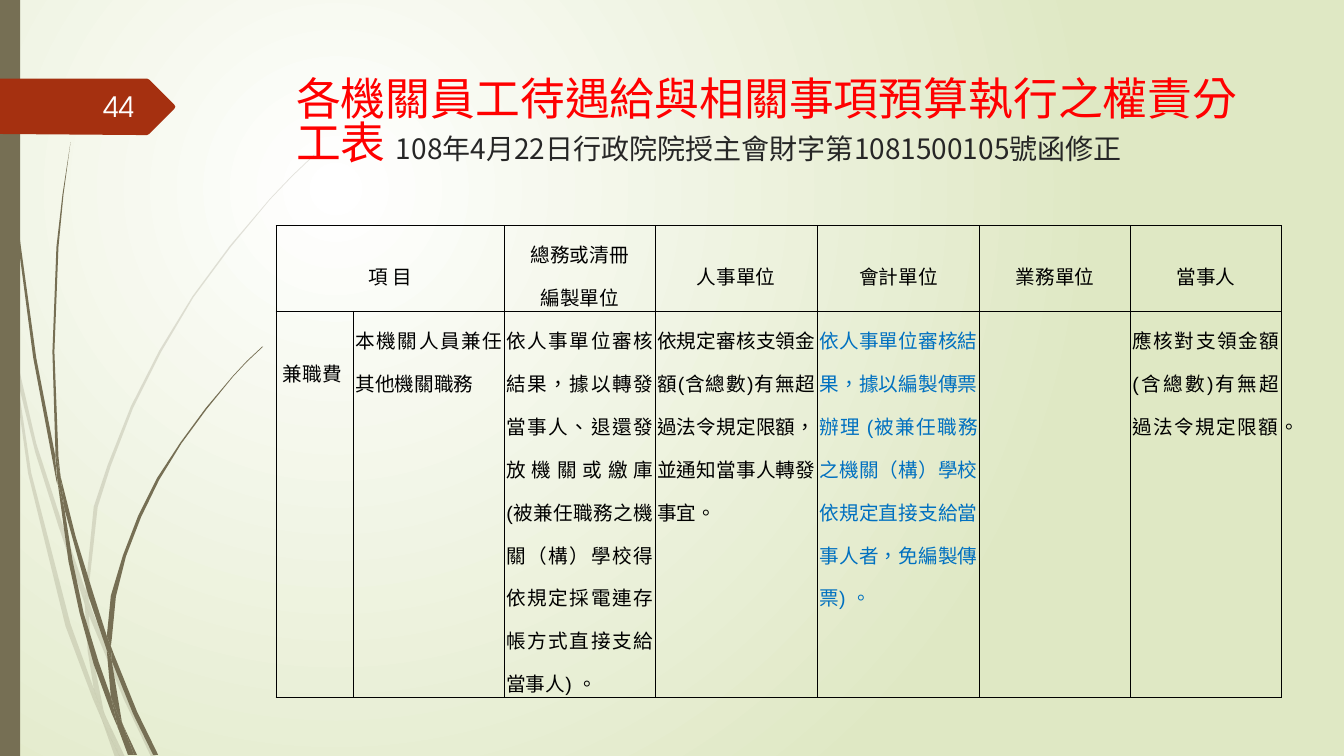
from lxml import etree
from pptx import Presentation
from pptx import util as u
from pptx.dml import color
from pptx.enum import lang, text
from pptx.enum import shapes as kinds
from pptx.oxml import ns

COLORS = {
    "white": "FFFFFF", "mist": "DFE8C4", "stem": "766F54", "flag": "A53010",
    "title": "FF0000", "note": "262626", "number": "FEFFFF",
    "black": "000000", "blue": "0070C0",
}
CJK = "Noto Sans CJK SC"
HUNDREDTH_INCH = u.Cm(0.0254)

PALE_STEMS = [
    [(11, 350), (9, 322), (0, 282), (0, 299), (10, 344)],
    [(58, 522), (84, 599), (85, 586), (62, 520), (36, 440), (14, 345), (17, 376), (35, 449)],
    [(92, 607), (88, 596), (88, 610), (123, 694), (150, 751), (155, 751), (127, 692)],
    [(119, 751), (124, 751), (105, 711)],
    [(93, 683), (70, 619), (31, 469), (17, 376), (11, 350), (28, 470), (65, 621),
     (92, 693), (101, 714), (99, 707)],
    [(84, 599), (87, 646), (93, 683), (96, 692), (105, 711), (103, 706), (91, 646),
     (88, 610), (88, 608)],
    [(88, 584), (97, 503), (110, 462), (132, 405), (160, 349), (192, 295), (229, 245),
     (268, 198), (290, 175), (312, 154), (312, 153), (289, 175), (268, 197), (228, 244),
     (191, 294), (158, 348), (130, 403), (107, 461), (93, 503), (85, 584), (85, 586), (88, 596)],
    [(101, 714), (114, 751), (119, 751)],
    [(88, 608), (88, 610), (88, 596), (85, 586), (84, 599)],
    [(96, 692), (93, 683), (99, 707), (101, 714), (119, 751), (105, 711)],
]
DARK_STEMS = [
    [(7, 110), (17, 233), (33, 355), (56, 477), (57, 481), (55, 457), (55, 453), (36, 355),
     (19, 232), (8, 109), (5, 48), (4, 0), (3, 0), (4, 48)],
    [(88, 592), (106, 645), (106, 633), (106, 631), (93, 590), (75, 532), (60, 472), (64, 505)],
    [(113, 649), (110, 641), (111, 656), (132, 708), (152, 749), (157, 749), (136, 706)],
    [(110, 691), (98, 657), (83, 608), (72, 556), (64, 505), (57, 477), (68, 557), (79, 608),
     (93, 659), (111, 708), (117, 722), (116, 717)],
    [(60, 472), (58, 453), (54, 349), (58, 245), (63, 193), (70, 141), (62, 193), (56, 245),
     (52, 349), (55, 449)],
    [(133, 749), (136, 749), (122, 719)],
    [(57, 477), (64, 505), (60, 472), (55, 449), (55, 453)],
    [(111, 633), (115, 592), (125, 552), (140, 513), (158, 476), (180, 440), (205, 406),
     (231, 374), (245, 359), (261, 344), (260, 344), (245, 358), (231, 373), (204, 405),
     (179, 439), (156, 474), (137, 512), (122, 551), (110, 591), (106, 631), (110, 641)],
    [(117, 722), (127, 749), (131, 749)],
    [(106, 645), (110, 691), (116, 706), (122, 719), (121, 716), (111, 656), (109, 651)],
    [(106, 645), (109, 651), (111, 656), (110, 641), (106, 631)],
    [(116, 706), (110, 691), (116, 717), (117, 722), (130, 749), (133, 749), (122, 719)],
]
FLAG = [(173, 108), (148, 133), (146, 134), (136, 134), (0, 133), (0, 78),
        (146, 78), (148, 79), (173, 104), (174, 106)]

COLUMN_WIDTHS = [1.95, 3.8, 3.8, 4.09, 4.09, 3.8, 3.8]
ROW_HEIGHTS = [2.06, 9.14]
HEADINGS = {
    0: ["項 目"], 2: ["總務或清冊", "編製單位"], 3: ["人事單位"],
    4: ["會計單位"], 5: ["業務單位"], 6: ["當事人"],
}
DUTIES = [
    "兼職費",
    "本機關人員兼任其他機關職務",
    "依人事單位審核結果，據以轉發當事人、退還發放機關或繳庫 "
    "(被兼任職務之機關（構）學校得依規定採電連存帳方式直接支給當事人) 。",
    "依規定審核支領金額(含總數)有無超過法令規定限額，並通知當事人轉發事宜。",
    "依人事單位審核結果，據以編製傳票辦理 "
    "(被兼任職務之機關（構）學校依規定直接支給當事人者，免編製傳票) 。",
    "",
    "應核對支領金額(含總數)有無超過法令規定限額。",
]


def rgb(name):
    return color.RGBColor.from_string(COLORS[name])


def add_run(paragraph, words, size, font, color_name):
    run = paragraph.add_run()
    run.text = words
    run.font.size = u.Pt(size)
    run.font.name = font
    run.font.bold = False
    run.font.color.rgb = rgb(color_name)
    run.font.language_id = lang.MSO_LANGUAGE_ID.TRADITIONAL_CHINESE
    east_asian = etree.SubElement(run.font._element, ns.qn("a:ea"))
    east_asian.set("typeface", CJK)


def paint(shape, color_name, opacity=100):
    shape.shadow.inherit = False
    shape.fill.solid()
    shape.fill.fore_color.rgb = rgb(color_name)
    shape.line.fill.background()
    if opacity < 100:
        fill_color = shape.element.spPr.find(".//" + ns.qn("a:srgbClr"))
        etree.SubElement(fill_color, ns.qn("a:alpha")).set("val", str(opacity * 1000))


def add_outline(slide, points, color_name, opacity=100):
    builder = slide.shapes.build_freeform(*points[0], scale=HUNDREDTH_INCH)
    builder.add_line_segments(points[1:], close=True)
    paint(builder.convert_to_shape(), color_name, opacity)


def set_background(slide):
    fill = slide.background.fill
    fill.gradient()
    for stop, position, name in zip(fill.gradient_stops, (0, 1), ("white", "mist")):
        stop.position = position
        stop.color.rgb = rgb(name)
    gradient = slide.element.find(".//" + ns.qn("a:gradFill"))
    gradient.remove(gradient.find(ns.qn("a:lin")))
    circle = etree.SubElement(gradient, ns.qn("a:path"), path="circle")
    etree.SubElement(circle, ns.qn("a:fillToRect"),
                     l="50000", t="50000", r="100000", b="100000")


def add_decoration(slide):
    for points in PALE_STEMS:
        add_outline(slide, points, "stem", 20)
    for points in DARK_STEMS:
        add_outline(slide, points, "stem")
    bar = slide.shapes.add_shape(kinds.MSO_SHAPE.RECTANGLE, 0, 0, u.Cm(0.51), u.Cm(19.05))
    paint(bar, "stem")
    add_outline(slide, FLAG, "flag")


def set_title(slide):
    title = slide.shapes.title
    title.element.getparent().append(title.element)
    title.left, title.top = u.Cm(7.21), u.Cm(1.73)
    title.width, title.height = u.Cm(24.77), u.Cm(3.56)
    frame = title.text_frame
    frame.word_wrap = True
    frame.auto_size = text.MSO_AUTO_SIZE.NONE
    frame.vertical_anchor = text.MSO_ANCHOR.TOP
    frame.margin_top = u.Cm(0.28)
    paragraph = frame.paragraphs[0]
    paragraph.alignment = text.PP_ALIGN.LEFT
    paragraph.line_spacing = 0.82
    add_run(paragraph, "各機關員工待遇給與相關事項預算執行之權責分工表 ", 32, CJK, "title")
    add_run(paragraph, "108年4月22日行政院院授主會財字第1081500105號函修正", 20, CJK, "note")


def add_borders(cell):
    properties = cell._tc.get_or_add_tcPr()
    for position, side in enumerate(("a:lnL", "a:lnR", "a:lnT", "a:lnB")):
        line = etree.Element(ns.qn(side), w=str(u.Pt(1)))
        fill = etree.SubElement(line, ns.qn("a:solidFill"))
        etree.SubElement(fill, ns.qn("a:srgbClr"), val=COLORS["black"])
        properties.insert(position, line)


def fill_cell(cell, lines, alignment, color_name="black"):
    for index, words in enumerate(lines):
        frame = cell.text_frame
        paragraph = frame.add_paragraph() if index else frame.paragraphs[0]
        paragraph.alignment = alignment
        paragraph.line_spacing = 1.5
        if words:
            add_run(paragraph, words, 14, "Arial", color_name)


def add_duty_table(slide):
    frame = slide.shapes.add_table(2, len(COLUMN_WIDTHS), u.Cm(6.96), u.Cm(5.69),
                                   u.Cm(sum(COLUMN_WIDTHS)), u.Cm(sum(ROW_HEIGHTS)))
    table = frame.table
    table.first_row = table.horz_banding = False
    for column, width in zip(table.columns, COLUMN_WIDTHS):
        column.width = u.Cm(width)
    for row, height in zip(table.rows, ROW_HEIGHTS):
        row.height = u.Cm(height)
    for cell in table.iter_cells():
        cell.fill.background()
        cell.margin_left = cell.margin_right = u.Cm(0.05)
        cell.margin_top = cell.margin_bottom = 0
        add_borders(cell)
    table.cell(0, 0).merge(table.cell(0, 1))
    for index, lines in HEADINGS.items():
        heading = table.cell(0, index)
        heading.vertical_anchor = text.MSO_ANCHOR.MIDDLE
        fill_cell(heading, lines, text.PP_ALIGN.CENTER)
    for index, words in enumerate(DUTIES):
        fill_cell(table.cell(1, index), [words], text.PP_ALIGN.JUSTIFY,
                  "blue" if index == 4 else "black")
    table.cell(1, 0).margin_top = u.Cm(0.83)
    table.cell(1, 0).margin_left = u.Cm(0.17)


def add_slide_number(slide):
    box = slide.shapes.add_textbox(u.Cm(1.47), u.Cm(2.18), u.Cm(2.16), u.Cm(1.02))
    box.text_frame.word_wrap = True
    box.text_frame.vertical_anchor = text.MSO_ANCHOR.MIDDLE
    paragraph = box.text_frame.paragraphs[0]
    paragraph.alignment = text.PP_ALIGN.RIGHT
    add_run(paragraph, "44", 20, "TeX Gyre Adventor", "number")


def main():
    presentation = Presentation()
    presentation.slide_width, presentation.slide_height = u.Cm(33.87), u.Cm(19.05)
    slide = presentation.slides.add_slide(presentation.slide_layouts[5])
    set_background(slide)
    add_decoration(slide)
    set_title(slide)
    add_duty_table(slide)
    add_slide_number(slide)
    presentation.save("out.pptx")


if __name__ == "__main__":
    main()
